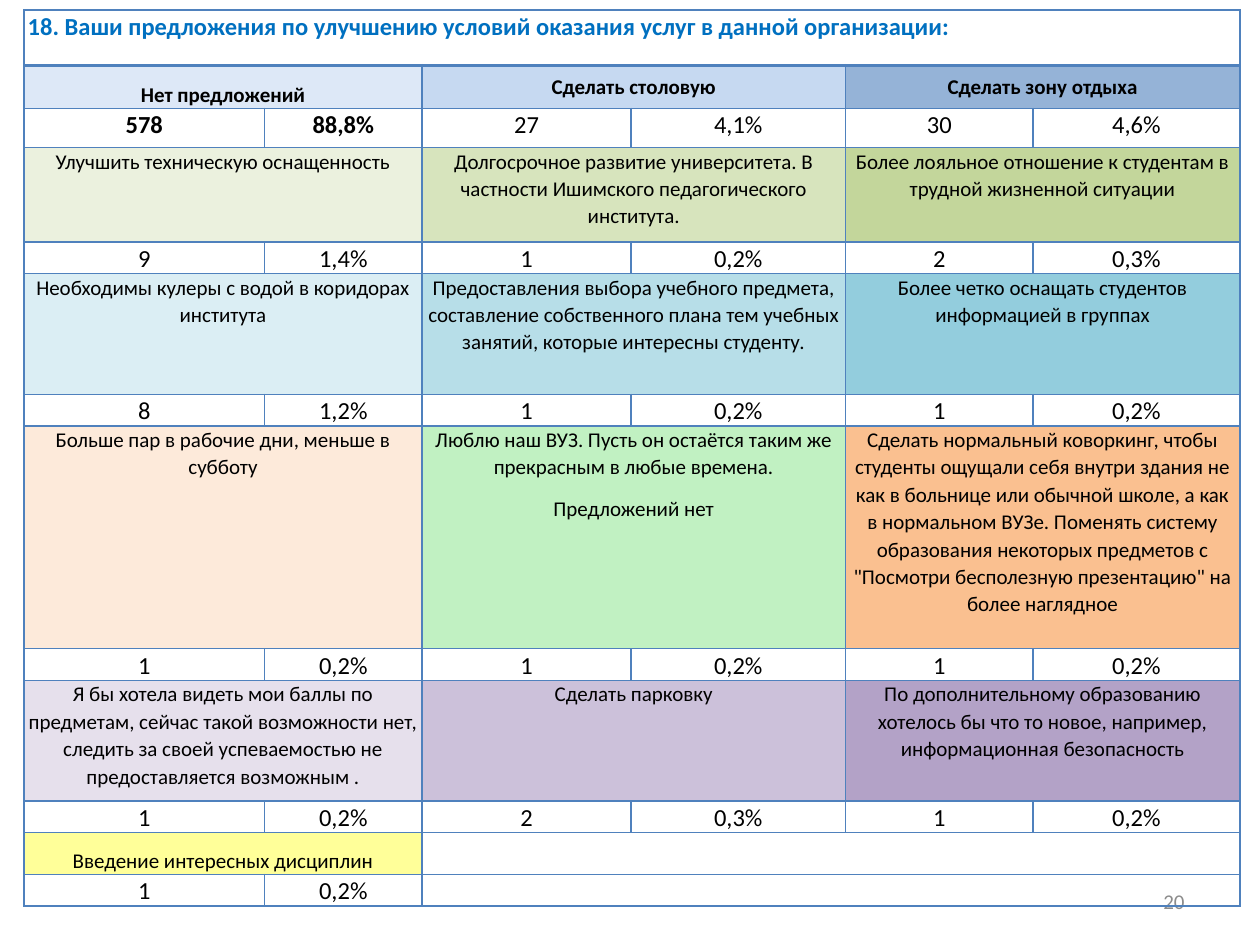
from dataclasses import dataclass

from lxml import etree
from pptx import Presentation
from pptx import util as u
from pptx.dml.color import RGBColor
from pptx.enum import text
from pptx.oxml import ns

TOP, MIDDLE, BOTTOM = (text.MSO_ANCHOR.TOP, text.MSO_ANCHOR.MIDDLE,
                       text.MSO_ANCHOR.BOTTOM)
LEFT, CENTER, RIGHT = (text.PP_ALIGN.LEFT, text.PP_ALIGN.CENTER,
                       text.PP_ALIGN.RIGHT)


@dataclass(frozen=True)
class Theme:
    font: str = "Calibri"
    ink: str = "000000"
    heading: str = "0070C0"
    grid: str = "4F81BD"
    page: str = "8C8C8C"
    large: int = 14
    small: int = 12
    thin: int = 1
    thick: int = 2


THEME = Theme()
HEADING = "18. Ваши предложения по улучшению условий оказания услуг в данной организации:"
COLUMNS = [1.91, 1.25, 1.66, 1.7, 1.49, 1.64]
HEADING_HEIGHT = 0.44

# Each group: label height, number height, [(label, fill, count, share)].
GROUPS = [
    (0.34, 0.31, [
        ("Нет предложений", "DDE8F7", "578", "88,8%"),
        ("Сделать столовую", "C6D9F1", "27", "4,1%"),
        ("Сделать зону отдыха", "95B3D7", "30", "4,6%")]),
    (0.75, 0.25, [
        ("Улучшить техническую оснащенность", "EBF1DE", "9", "1,4%"),
        ("Долгосрочное развитие университета. В частности Ишимского "
         "педагогического института.", "D7E4BD", "1", "0,2%"),
        ("Более лояльное отношение к студентам в трудной жизненной ситуации",
         "C3D69B", "2", "0,3%")]),
    (0.96, 0.25, [
        ("Необходимы кулеры с водой в коридорах института", "DBEEF4", "8", "1,2%"),
        ("Предоставления выбора учебного предмета, составление собственного "
         "плана тем учебных занятий, которые интересны студенту.",
         "B7DEE8", "1", "0,2%"),
        ("Более четко оснащать студентов информацией в группах",
         "93CDDD", "1", "0,2%")]),
    (1.77, 0.25, [
        ("Больше пар в рабочие дни, меньше в субботу", "FDEADA", "1", "0,2%"),
        ("Люблю наш ВУЗ. Пусть он остаётся таким же прекрасным в любые "
         "времена.\nПредложений нет", "C1F1C2", "1", "0,2%"),
        ("Сделать нормальный коворкинг, чтобы студенты ощущали себя внутри "
         "здания не как в больнице или обычной школе, а как в нормальном ВУЗе. "
         "Поменять систему образования некоторых предметов с \"Посмотри "
         "бесполезную презентацию\" на более наглядное", "FAC090", "1", "0,2%")]),
    (0.96, 0.25, [
        ("Я бы хотела видеть мои баллы по предметам, сейчас такой возможности "
         "нет, следить за своей успеваемостью не предоставляется возможным .",
         "E6E0EC", "1", "0,2%"),
        ("Сделать парковку", "CCC1DA", "2", "0,3%"),
        ("По дополнительному образованию хотелось бы что то новое, например, "
         "информационная безопасность", "B3A2C7", "1", "0,2%")]),
    (0.33, 0.25, [
        ("Введение интересных дисциплин", "FFFF99", "1", "0,2%")]),
]


def style(p, size, color, align, bold=False):
    p.alignment = align
    p.font.name = THEME.font
    p.font.size = u.Pt(size)
    p.font.bold = bold
    p.font.color.rgb = RGBColor.from_string(color)


def set_borders(cell, top=THEME.thin, bottom=THEME.thin):
    tc_pr = cell._tc.get_or_add_tcPr()
    widths = {"a:lnL": THEME.thin, "a:lnR": THEME.thin, "a:lnT": top, "a:lnB": bottom}
    for tag, width in widths.items():
        line = etree.SubElement(tc_pr, ns.qn(tag), w=str(u.Pt(width)))
        fill = etree.SubElement(line, ns.qn("a:solidFill"))
        etree.SubElement(fill, ns.qn("a:srgbClr"), val=THEME.grid)


def prepare_cell(cell, top=THEME.thin, bottom=THEME.thin):
    cell.margin_left = cell.margin_right = u.Inches(0.03)
    cell.margin_top = cell.margin_bottom = 0
    set_borders(cell, top, bottom)
    cell.fill.background()
    etree.SubElement(cell.text_frame.paragraphs[0]._p, ns.qn("a:endParaRPr"),
                     sz=str(THEME.small * 100))


def write_cell(cell, words, size, color=THEME.ink, align=CENTER, bold=False, anchor=TOP):
    cell.vertical_anchor = anchor
    tf = cell.text_frame
    tf.text = words
    for p in tf.paragraphs:
        p.line_spacing = 1.07
        p.space_after = u.Pt(8)
        style(p, size, color, align, bold)


def add_group(table, row, entries):
    first = row == 1
    for i, (label, fill, count, share) in enumerate(entries):
        col = 2 * i
        cell = table.cell(row, col)
        cell.merge(table.cell(row, col + 1))
        cell.fill.solid()
        cell.fill.fore_color.rgb = RGBColor.from_string(fill)
        anchor = TOP
        if first:
            anchor = MIDDLE if i else BOTTOM
        elif len(entries) == 1:
            anchor = BOTTOM
        write_cell(cell, label, THEME.small, bold=first, anchor=anchor)
        for offset, value in enumerate((count, share)):
            write_cell(table.cell(row + 1, col + offset), value, THEME.large,
                       bold=first and i == 0)
    used = 2 * len(entries)
    if used < len(COLUMNS):
        for r in (row, row + 1):
            table.cell(r, used).merge(table.cell(r, len(COLUMNS) - 1))


def add_answers(s, x, y, w, h):
    heights = [HEADING_HEIGHT]
    for label_height, number_height, _ in GROUPS:
        heights += [label_height, number_height]
    table = s.shapes.add_table(len(heights), len(COLUMNS), x, y, w, h).table
    table.first_row = table.horz_banding = False
    for column, width in zip(table.columns, COLUMNS):
        column.width = u.Inches(width)
    for i, (row, height) in enumerate(zip(table.rows, heights)):
        row.height = u.Inches(height)
        for cell in row.cells:
            prepare_cell(cell, THEME.thick if i == 1 else THEME.thin,
                         THEME.thick if i == 0 else THEME.thin)

    heading = table.cell(0, 0)
    heading.merge(table.cell(0, len(COLUMNS) - 1))
    write_cell(heading, HEADING, THEME.large, THEME.heading, LEFT, bold=True)
    for i, (_, _, entries) in enumerate(GROUPS):
        add_group(table, 1 + 2 * i, entries)


def add_page_number(s, x, y, w, h):
    tf = s.shapes.add_textbox(x, y, w, h).text_frame
    tf.word_wrap = True
    tf.vertical_anchor = MIDDLE
    tf.text = "20"
    style(tf.paragraphs[0], THEME.small, THEME.page, RIGHT)


def main():
    prs = Presentation()
    prs.slide_width, prs.slide_height = u.Inches(10), u.Inches(7.5)
    s = prs.slides.add_slide(prs.slide_layouts[6])
    add_page_number(s, u.Inches(7.17), u.Inches(6.95), u.Inches(2.33), u.Inches(0.4))
    add_answers(s, u.Inches(0.19), u.Inches(0.08), u.Inches(9.65), u.Inches(7.05))
    prs.save("out.pptx")


if __name__ == "__main__":
    main()
